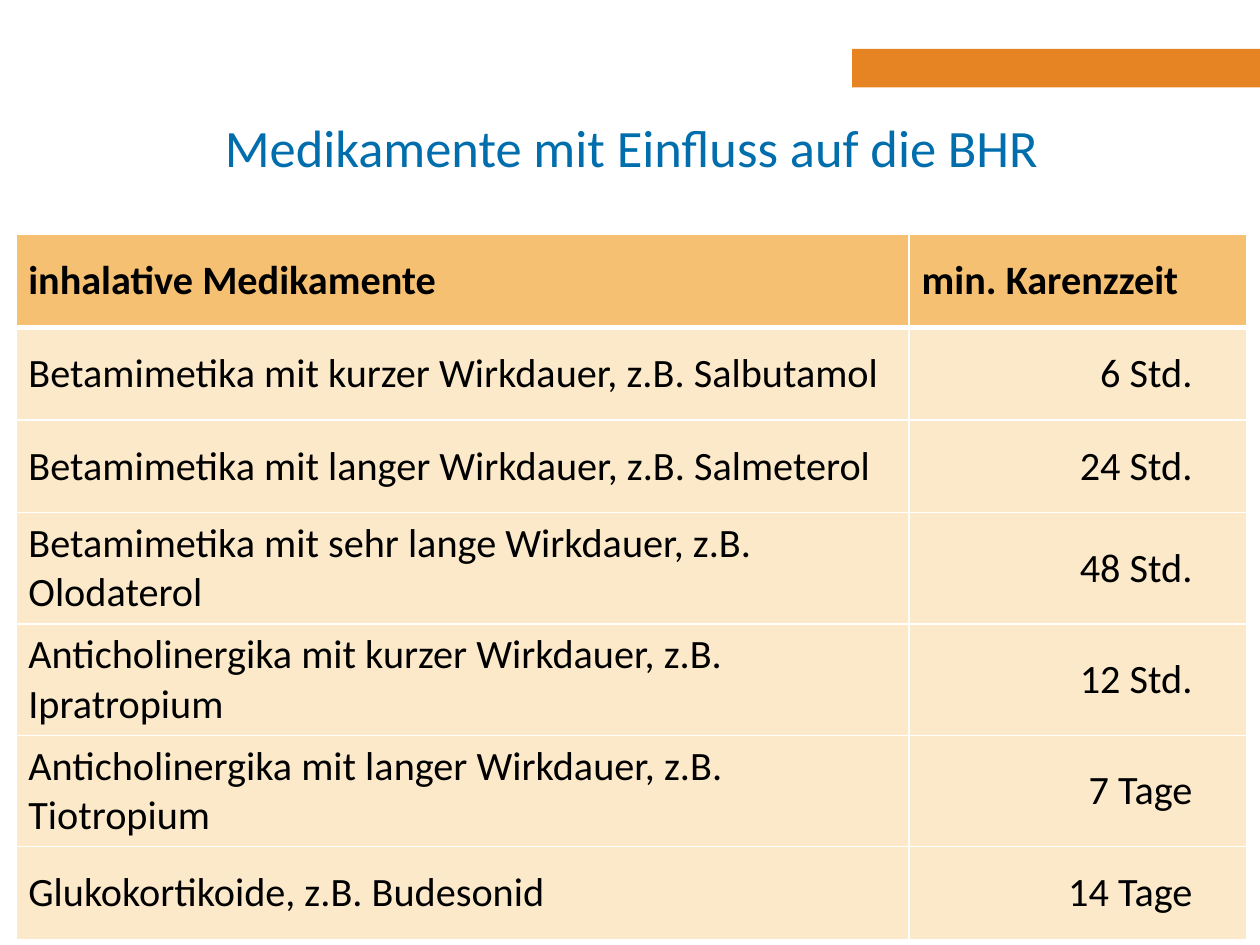
import pptx
import pptx.dml.color
import pptx.enum.shapes
import pptx.enum.text
import pptx.oxml.ns
import pptx.util
from lxml import etree

Pt = pptx.util.Pt
ALIGN = pptx.enum.text.PP_ALIGN
MIDDLE = pptx.enum.text.MSO_ANCHOR.MIDDLE

COLORS = {
    "bar": "E68323",
    "title": "006EAC",
    "text": "000000",
    "header": "F5C071",
    "body": "FBE9C9",
    "border": "FFFFFF",
}

ROWS = [
    ("inhalative Medikamente", "min. Karenzzeit"),
    ("Betamimetika mit kurzer Wirkdauer, z.B. Salbutamol", "6 Std."),
    ("Betamimetika mit langer Wirkdauer, z.B. Salmeterol", "24 Std."),
    ("Betamimetika mit sehr lange Wirkdauer, z.B. Olodaterol", "48 Std."),
    ("Anticholinergika mit kurzer Wirkdauer, z.B. Ipratropium", "12 Std."),
    ("Anticholinergika mit langer Wirkdauer, z.B. Tiotropium", "7 Tage"),
    ("Glukokortikoide, z.B. Budesonid", "14 Tage"),
]
COLUMN_WIDTHS = (510.5, 193)
ROW_HEIGHT = 53


def rgb(name):
    return pptx.dml.color.RGBColor.from_string(COLORS[name])


def write_text(text_frame, text, *, size, color="text", bold=False, align=ALIGN.LEFT):
    paragraph = text_frame.paragraphs[0]
    paragraph.alignment = align
    run = paragraph.add_run()
    run.text = text
    run.font.name = "Calibri"
    run.font.size = Pt(size)
    run.font.bold = bold
    run.font.color.rgb = rgb(color)


def add_bar(slide, left, top, width, height):
    shape = slide.shapes.add_shape(
        pptx.enum.shapes.MSO_SHAPE.RECTANGLE, Pt(left), Pt(top), Pt(width), Pt(height)
    )
    shape.shadow.inherit = False
    shape.fill.solid()
    shape.fill.fore_color.rgb = rgb("bar")
    shape.line.fill.background()


def place_title(slide, text):
    title = slide.shapes.title
    title.left, title.top, title.width, title.height = Pt(106.5), Pt(50), Pt(509), Pt(67)
    title.text_frame.vertical_anchor = MIDDLE
    title.text_frame.word_wrap = True
    write_text(title.text_frame, text, size=30, color="title", align=ALIGN.CENTER)


def set_borders(cell, widths):
    qn = pptx.oxml.ns.qn
    properties = cell._tc.get_or_add_tcPr()
    for index, (side, width) in enumerate(widths.items()):
        line = etree.Element(qn(f"a:ln{side}"), w=str(Pt(width)))
        fill = etree.SubElement(line, qn("a:solidFill"))
        etree.SubElement(fill, qn("a:srgbClr"), val=COLORS["border"])
        properties.insert(index, line)


def format_cell(cell, text, *, is_header, is_time):
    cell.fill.solid()
    cell.fill.fore_color.rgb = rgb("header" if is_header else "body")
    cell.vertical_anchor = MIDDLE
    if is_time:
        cell.margin_right = Pt(31)
    align = ALIGN.RIGHT if is_time and not is_header else ALIGN.LEFT
    write_text(cell.text_frame, text, size=23, bold=is_header, align=align)


def add_medication_table(slide):
    table = slide.shapes.add_table(
        len(ROWS), len(COLUMN_WIDTHS), Pt(9), Pt(134),
        Pt(sum(COLUMN_WIDTHS)), Pt(ROW_HEIGHT * len(ROWS)),
    ).table
    for column, width in zip(table.columns, COLUMN_WIDTHS):
        column.width = Pt(width)
    for row_index, values in enumerate(ROWS):
        table.rows[row_index].height = Pt(ROW_HEIGHT)
        for column_index, text in enumerate(values):
            cell = table.cell(row_index, column_index)
            format_cell(cell, text, is_header=row_index == 0, is_time=column_index == 1)
            top = 3 if row_index == 1 else 1
            bottom = 3 if row_index == 0 else 1
            set_borders(cell, {"L": 1, "R": 1, "T": top, "B": bottom})


def main():
    presentation = pptx.Presentation()
    presentation.slide_width, presentation.slide_height = Pt(720), Pt(540)
    slide = presentation.slides.add_slide(presentation.slide_layouts[5])
    add_bar(slide, 487, 28, 233, 22)
    place_title(slide, "Medikamente mit Einfluss auf die BHR")
    add_medication_table(slide)
    presentation.save("out.pptx")


if __name__ == "__main__":
    main()
